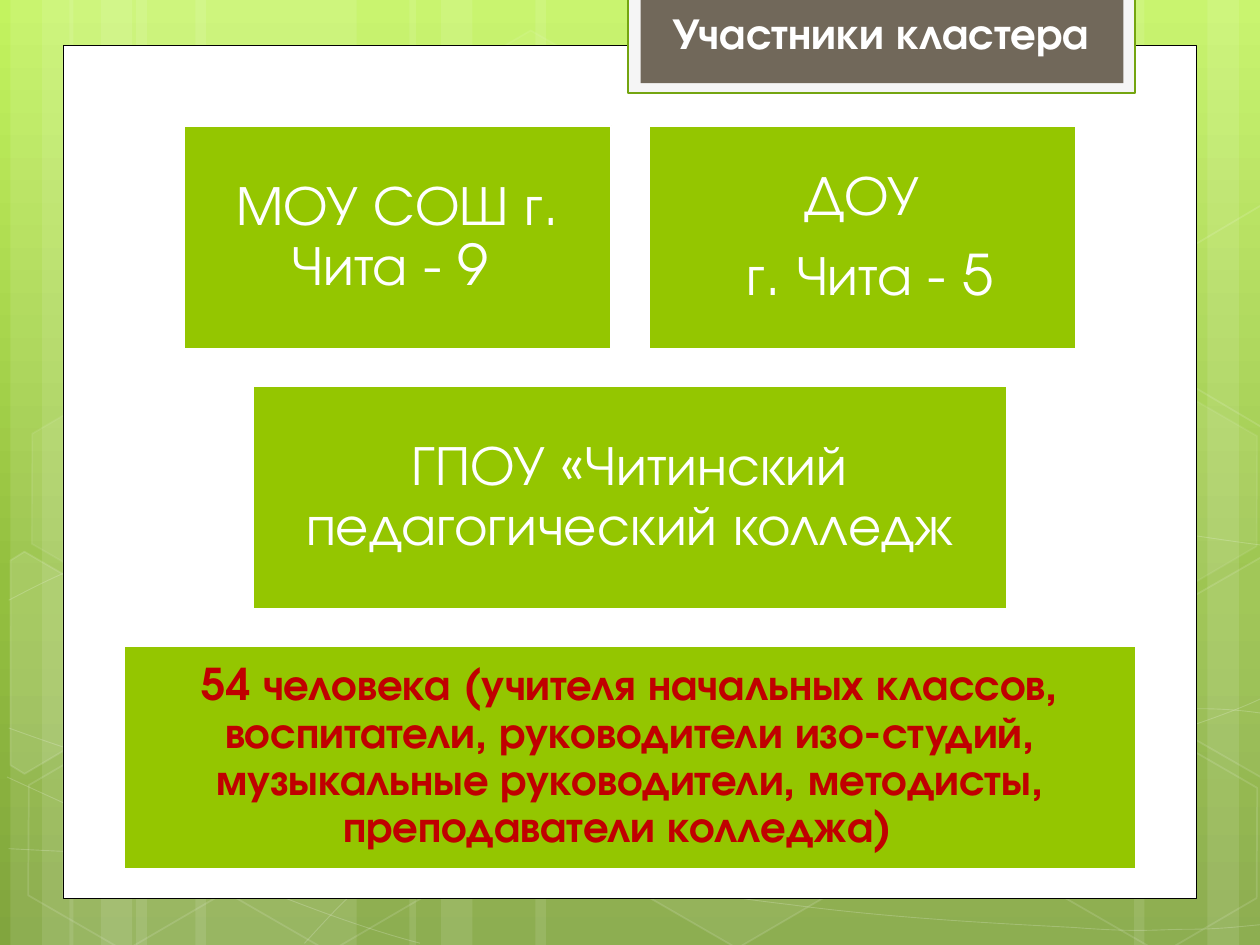
import copy
import math

import pptx
import pptx.dml.color
import pptx.enum.shapes
import pptx.enum.text
import pptx.oxml
import pptx.oxml.ns
import pptx.util

Pt = pptx.util.Pt
RGBColor = pptx.dml.color.RGBColor
MSO_SHAPE = pptx.enum.shapes.MSO_SHAPE
MSO_ANCHOR = pptx.enum.text.MSO_ANCHOR
PP_ALIGN = pptx.enum.text.PP_ALIGN
qn = pptx.oxml.ns.qn

DRAWING_NS = 'xmlns:a="http://schemas.openxmlformats.org/drawingml/2006/main"'
WHITE = RGBColor(0xFF, 0xFF, 0xFF)
BLACK = RGBColor(0, 0, 0)
GREEN = RGBColor(0x94, 0xC6, 0x00)
DARK_GREEN = RGBColor(0x74, 0xA5, 0x10)
PALE_GRAY = RGBColor(0xF5, 0xF5, 0xF5)
BROWN = RGBColor(0x71, 0x68, 0x5A)
RED = RGBColor(0xC0, 0, 0)
FONT = "TeX Gyre Adventor"
WIDTH, HEIGHT = 720, 540

# Content
TITLE = "Участники кластера"
# Rows of boxes: (text, width); each row is centred on the slide
BOX_ROWS = [
    [("МОУ СОШ г. Чита - 9 ", 244.2), ("ДОУ\n г. Чита - 5", 244.2)],
    [("ГПОУ «Читинский педагогический колледж", 430.5)],
    [("54 человека (учителя начальных классов, воспитатели, "
      "руководители изо-студий, музыкальные руководители, методисты, "
      "преподаватели колледжа)  ", 578)],
]
# Size, colour, bold and inset of the text in each row
ROW_STYLES = [(32, WHITE, False, 9.6), (32, WHITE, False, 9.6), (25, RED, True, 7.5)]
BOX_TOP, BOX_HEIGHT, BOX_GAP = 72, 127.4, 21.2

# Background: gradient stops, stripes (left, width), hexagons (left, top, fill %, line %)
GRADIENT = [(0, RGBColor(0xC3, 0xF3, 0x5F)), (0.62, RGBColor(0x93, 0xBF, 0x3F)),
            (1, RGBColor(0x81, 0xA5, 0x3E))]
STRIPES = [(77.8, 126), (6, 36), (24, 60), (111.6, 126), (39.6, 36), (57.6, 60),
           (528, 126), (690, 36), (648, 60), (306, 222), (234, 36), (252, 60)]
HEXAGONS = [(240.5, 26, 4, 8), (358, 424, 6, 12), (8, 425.5, None, 12),
            (10, 224.6, 7, 8), (125, 426, None, 12), (542, 326, 10, 12),
            (600.5, 427, None, 12), (600.5, 226, 7, 8)]
HEXAGON_TILT = 30
# Hexagons cut by the slide's edge: (centre, corners as seen, fill %)
CUT_HEXAGONS = [
    ((25.9, 385.2),
     [(6, 320), (14, 315), (69, 347), (68, 410), (14, 442), (6, 437)], 10),
    ((709.2, 374.4),
     [(667, 349), (721, 318), (726, 321), (726, 441), (721, 444), (667, 413)], 4),
    ((709.2, 173.5),
     [(667, 149), (721, 117), (727, 121), (726, 241), (721, 244), (667, 212)], None),
]
# Chains of cubic curves: a start, then three points for each curve
WAVES = [
    [(5, 485), (44, 487), (83, 489), (137, 488), (191, 487), (258, 486), (330, 479),
     (402, 472), (504, 458), (570, 444), (636, 431), (703, 409), (725, 397)],
    [(5, 343), (26, 332), (47, 321), (87, 310), (128, 300), (186, 284), (250, 279),
     (314, 274), (392, 273), (471, 279), (550, 284), (682, 307), (725, 312)],
    [(4, 444), (91, 484), (178, 523), (240, 539)],
    [(5, 416), (27, 424), (50, 432), (92, 444), (134, 454), (197, 472), (257, 485),
     (317, 497), (392, 510), (452, 517), (512, 525), (576, 528), (614, 530),
     (652, 533), (662, 531), (680, 531), (699, 531), (712, 529), (725, 528)],
    [(174, 539), (187, 525), (200, 510), (217, 498), (235, 485), (259, 470), (279, 460),
     (300, 450), (312, 446), (338, 438), (364, 431), (413, 421), (438, 416),
     (464, 411), (467, 411), (490, 410), (512, 408), (547, 405), (572, 405),
     (597, 404), (638, 405), (638, 405), (654, 405), (670, 405), (686, 405),
     (699, 405), (711, 406), (724, 408)],
]


def set_opacity(fill, percent):
    color = fill._xPr.find(qn("a:solidFill"))[0]
    color.append(pptx.oxml.parse_xml(f'<a:alpha {DRAWING_NS} val="{percent * 1000}"/>'))


def paint(shape, fill=None, line=None, line_width=1, fill_opacity=None, line_opacity=None):
    shape.shadow.inherit = False
    for part, color, opacity in ((shape.fill, fill, fill_opacity),
                                 (shape.line.fill, line, line_opacity)):
        if color is None:
            part.background()
            continue
        part.solid()
        part.fore_color.rgb = color
        if opacity:
            set_opacity(part, opacity)
    if line is not None:
        shape.line.width = Pt(line_width)


def add_block(shapes, left, top, width, height, kind=MSO_SHAPE.RECTANGLE):
    return shapes.add_shape(kind, Pt(left), Pt(top), Pt(width), Pt(height))


def add_outline(shapes, points, close):
    points = [(Pt(x), Pt(y)) for x, y in points]
    builder = shapes.build_freeform(*points[0])
    builder.add_line_segments(points[1:], close=close)
    return builder.convert_to_shape()


def bend_lines(shape):
    """Turn every three line segments into one cubic curve."""
    lines = list(shape._element.iter(qn("a:lnTo")))
    for start in range(0, len(lines), 3):
        curve = pptx.oxml.parse_xml(f"<a:cubicBezTo {DRAWING_NS}/>")
        lines[start].addprevious(curve)
        for line in lines[start:start + 3]:
            curve.append(line[0])
            line.getparent().remove(line)


def turn_back(point, centre):
    angle = math.radians(HEXAGON_TILT)
    x, y = point[0] - centre[0], point[1] - centre[1]
    return (centre[0] + x * math.cos(angle) + y * math.sin(angle),
            centre[1] - x * math.sin(angle) + y * math.cos(angle))


def write(shape, text, size, color, bold):
    frame = shape.text_frame
    frame.word_wrap = True
    frame.text = text
    for paragraph in frame.paragraphs:
        paragraph.alignment = PP_ALIGN.CENTER
        for run in paragraph.runs:
            run.font.name = FONT
            run.font.size = Pt(size)
            run.font.bold = bold
            run.font.color.rgb = color
    return frame


def draw_background(slide):
    fill = slide.background.fill
    fill.gradient()
    fill.gradient_angle = 270
    stop_list = fill._fill._gradFill.find(qn("a:gsLst"))
    stop_list.append(copy.deepcopy(stop_list[-1]))
    for stop, (position, color) in zip(fill.gradient_stops, GRADIENT):
        stop.position = position
        stop.color.rgb = color

    shapes = slide.shapes
    for left, width in STRIPES:
        paint(add_block(shapes, left, 0, width, HEIGHT), WHITE, fill_opacity=10)
    for points in WAVES:
        wave = add_outline(shapes, points, close=False)
        bend_lines(wave)
        paint(wave, line=WHITE, line_width=0.5, line_opacity=20)
    for left, top, fill_opacity, line_opacity in HEXAGONS:
        hexagon = add_block(shapes, left, top, 126, 109.4, MSO_SHAPE.HEXAGON)
        hexagon.adjustments[0] = 0.285
        hexagon.rotation = HEXAGON_TILT
        paint(hexagon, WHITE if fill_opacity else None, WHITE, 1, fill_opacity, line_opacity)
    for centre, corners, fill_opacity in CUT_HEXAGONS:
        hexagon = add_outline(shapes, [turn_back(corner, centre) for corner in corners], True)
        hexagon.rotation = HEXAGON_TILT
        paint(hexagon, WHITE if fill_opacity else None, WHITE, 1, fill_opacity, 12)


def draw_boxes(shapes):
    for index, (row, style) in enumerate(zip(BOX_ROWS, ROW_STYLES)):
        size, color, bold, inset = style
        top = BOX_TOP + index * (BOX_HEIGHT + BOX_GAP)
        row_width = sum(width for _, width in row) + BOX_GAP * (len(row) - 1)
        left = (WIDTH - row_width) / 2
        for text, width in row:
            box = add_block(shapes, left, top, width, BOX_HEIGHT)
            paint(box, GREEN, WHITE, 1.25)
            frame = write(box, text, size, color, bold)
            frame.vertical_anchor = MSO_ANCHOR.MIDDLE
            frame.margin_left = frame.margin_right = Pt(inset)
            frame.margin_top = frame.margin_bottom = Pt(inset)
            for paragraph in frame.paragraphs:
                paragraph.line_spacing = 0.9
                paragraph.space_after = Pt(round(size * 0.35, 1))
            left += width + BOX_GAP


def main():
    presentation = pptx.Presentation()
    presentation.slide_width, presentation.slide_height = Pt(WIDTH), Pt(HEIGHT)
    slide = presentation.slides.add_slide(presentation.slide_layouts[6])
    shapes = slide.shapes
    draw_background(slide)

    # White page and title tab
    paint(add_block(shapes, 36, 25.9, 648, 487.3), WHITE, BLACK, 0.5)
    paint(add_block(shapes, 359, -1.5, 289.7, 54.7), PALE_GRAY, DARK_GREEN, 1.25)
    paint(add_block(shapes, 366, -1.5, 276, 49), BROWN)
    title = shapes.add_textbox(Pt(357.1), Pt(0), Pt(292.3), Pt(37.4))
    write(title, TITLE, 25, WHITE, True)

    draw_boxes(shapes)
    presentation.save("out.pptx")


if __name__ == "__main__":
    main()
